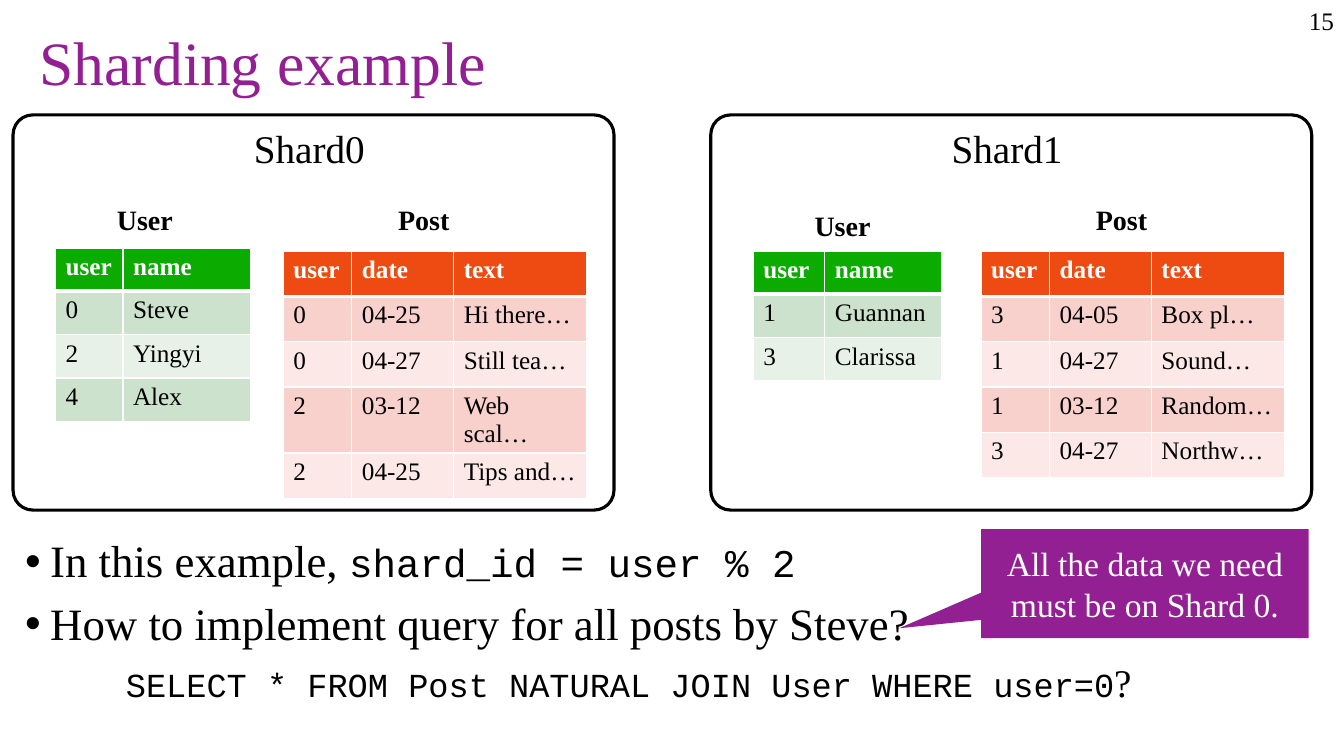
"""Build the slide that shows how users and posts are split over two shards."""
import dataclasses

import lxml.etree
import pptx
import pptx.dml.color
import pptx.enum.shapes
import pptx.enum.text
import pptx.oxml
import pptx.oxml.ns
import pptx.util

Inches = pptx.util.Inches
Pt = pptx.util.Pt
Align = pptx.enum.text.PP_ALIGN
Anchor = pptx.enum.text.MSO_ANCHOR
Shapes = pptx.enum.shapes.MSO_SHAPE
qn = pptx.oxml.ns.qn


@dataclasses.dataclass(frozen=True)
class Theme:
    serif: str = "Times New Roman"
    mono: str = "Courier New"
    black: str = "000000"
    white: str = "FFFFFF"
    purple: str = "932092"
    user_fills: tuple = ("0CAB00", "CCE2CC", "E7F1E7")
    post_fills: tuple = ("ED4B11", "F8D0CC", "FCE9E7")
    title: int = 44
    bullet: int = 32
    heading: int = 28
    callout: int = 24
    label: int = 20
    small: int = 18


class SlideBuilder:
    def __init__(self, presentation, theme):
        self.theme = theme
        self.slide = presentation.slides.add_slide(presentation.slide_layouts[5])

    def color(self, value):
        return pptx.dml.color.RGBColor.from_string(value)

    def add_run(self, paragraph, text, size, color=None, **formats):
        run = paragraph.add_run()
        run.text = text
        values = {"name": self.theme.serif, "size": Pt(size), "bold": False, **formats}
        for attribute, value in values.items():
            setattr(run.font, attribute, value)
        run.font.color.rgb = self.color(color or self.theme.black)

    def format_paragraph(self, paragraph, **formats):
        for attribute, value in formats.items():
            setattr(paragraph, attribute, value)

    def format_frame(self, frame, **formats):
        values = {"word_wrap": True, "auto_size": pptx.enum.text.MSO_AUTO_SIZE.NONE, **formats}
        for attribute, value in values.items():
            setattr(frame, attribute, value)

    def add_title(self, text, box):
        title = self.slide.shapes.title
        for attribute, value in zip(("left", "top", "width", "height"), box):
            setattr(title, attribute, Inches(value))
        self.format_frame(title.text_frame, vertical_anchor=Anchor.MIDDLE)
        paragraph = title.text_frame.paragraphs[0]
        self.format_paragraph(paragraph, alignment=Align.LEFT, line_spacing=0.9)
        self.add_run(paragraph, text, self.theme.title, self.theme.purple)

    def add_text(self, text, box, size, alignment=Align.LEFT, bold=False):
        shape = self.slide.shapes.add_textbox(*map(Inches, box))
        self.format_frame(shape.text_frame)
        paragraph = shape.text_frame.paragraphs[0]
        paragraph.alignment = alignment
        self.add_run(paragraph, text, size, bold=bold)

    def add_body(self, lines, box):
        frame = self.slide.shapes.add_textbox(*map(Inches, box)).text_frame
        self.format_frame(frame)
        for index, (bulleted, margin, runs) in enumerate(lines):
            paragraph = frame.add_paragraph() if index else frame.paragraphs[0]
            self.format_paragraph(paragraph, line_spacing=0.9, space_before=Pt(10))
            properties = paragraph._p.get_or_add_pPr()
            properties.set("marL", str(Inches(margin)))
            if bulleted:
                properties.set("indent", str(-Inches(margin)))
                lxml.etree.SubElement(properties, qn("a:buFont"), typeface="Arial")
                lxml.etree.SubElement(properties, qn("a:buChar"), char="•")
            for text, size, font in runs:
                self.add_run(paragraph, text, size, name=font)

    def add_borders(self, cell, row):
        properties = cell._tc.get_or_add_tcPr()
        widths = {"L": 1, "R": 1, "T": 3 if row == 1 else 1, "B": 3 if row == 0 else 1}
        for side, width in widths.items():
            line = lxml.etree.SubElement(properties, qn(f"a:ln{side}"), w=str(Pt(width)))
            fill = lxml.etree.SubElement(line, qn("a:solidFill"))
            lxml.etree.SubElement(fill, qn("a:srgbClr"), val=self.theme.white)

    def add_table(self, rows, left, top, widths, row_height, fills):
        size = map(Inches, (left, top, sum(widths), row_height * len(rows)))
        table = self.slide.shapes.add_table(len(rows), len(widths), *size).table
        table.horz_banding = False
        for column, width in zip(table.columns, widths):
            column.width = Inches(width)
        for row, values in enumerate(rows):
            table.rows[row].height = Inches(row_height)
            header = row == 0
            fill = fills[0] if header else fills[2 - row % 2]
            for column, text in enumerate(values):
                cell = table.cell(row, column)
                self.add_borders(cell, row)
                cell.fill.solid()
                cell.fill.fore_color.rgb = self.color(fill)
                color = self.theme.white if header else self.theme.black
                paragraph = cell.text_frame.paragraphs[0]
                self.add_run(paragraph, text, self.theme.small, color, bold=header)

    def add_panel(self, box):
        shape = self.slide.shapes.add_shape(Shapes.ROUNDED_RECTANGLE, *map(Inches, box))
        shape.shadow.inherit = False
        shape.adjustments[0] = 0.05
        shape.fill.background()
        shape.line.color.rgb = self.color(self.theme.black)
        shape.line.width = Pt(2.25)

    def add_callout(self, text, box, tip):
        shape = self.slide.shapes.add_shape(Shapes.RECTANGULAR_CALLOUT, *map(Inches, box))
        shape.shadow.inherit = False
        for index, value in enumerate(tip):
            shape.adjustments[index] = value
        shape.fill.solid()
        shape.fill.fore_color.rgb = self.color(self.theme.purple)
        shape.line.fill.background()
        self.format_frame(shape.text_frame, vertical_anchor=Anchor.MIDDLE)
        paragraph = shape.text_frame.paragraphs[0]
        paragraph.alignment = Align.CENTER
        self.add_run(paragraph, text, self.theme.callout, self.theme.white)

    def add_shard(self, name, offset, users, user_widths, user_top, label_top, posts):
        theme = self.theme
        users = [("user", "name"), *users]
        posts = [("user", "date", "text"), *posts]
        self.add_table(users, 0.55 + offset, user_top, user_widths, 0.43, theme.user_fills)
        self.add_table(posts, 2.81 + offset, 2.49, (0.68, 1.01, 1.32), 0.45, theme.post_fills)
        for text, left, top in (("User", 1.06, label_top), ("Post", 3.85, 1.96)):
            self.add_text(text, (left + offset, top, 0.92, 0.44), theme.label, bold=True)
        self.add_panel((0.13 + offset, 1.14, 5.96, 3.92))
        self.add_text(name, (2.42 + offset, 1.18, 1.37, 0.57), theme.heading)


def main():
    presentation = pptx.Presentation()
    presentation.slide_width = Inches(13.33)
    presentation.slide_height = Inches(7.5)
    theme = Theme()
    builder = SlideBuilder(presentation, theme)
    builder.add_text("15", (12.68, 0, 0.65, 0.4), theme.small, Align.RIGHT)
    builder.add_title("Sharding example", (0.29, 0.17, 12.73, 0.97))
    query = "SELECT * FROM Post NATURAL JOIN User WHERE user=0"
    builder.add_body([
        (True, 0.25, [("In this example, ", theme.bullet, theme.serif),
                      ("shard_id = user % 2", theme.heading, theme.mono)]),
        (True, 0.25, [("How to implement query for all posts by Steve?",
                       theme.bullet, theme.serif)]),
        (False, 1, [(query, theme.callout, theme.mono), ("?", theme.heading, theme.serif)]),
    ], (0.15, 5.3, 12.73, 2.03))
    builder.add_shard(
        "Shard0", 0, [("0", "Steve"), ("2", "Yingyi"), ("4", "Alex")], (0.67, 1.27), 2.46, 1.96,
        [("0", "04-25", "Hi there…"), ("0", "04-27", "Still tea…"),
         ("2", "03-12", "Web scal…"), ("2", "04-25", "Tips and…")])
    builder.add_shard(
        "Shard1", 6.92, [("1", "Guannan"), ("3", "Clarissa")], (0.71, 1.16), 2.49, 2.02,
        [("3", "04-05", "Box pl…"), ("1", "04-27", "Sound…"),
         ("1", "03-12", "Random…"), ("3", "04-27", "Northw…")])
    builder.add_callout("All the data we need must be on Shard 0.",
                        (9.73, 5.25, 3.25, 1.08), (-0.75, 0.41))
    presentation.save("out.pptx")


if __name__ == "__main__":
    main()
